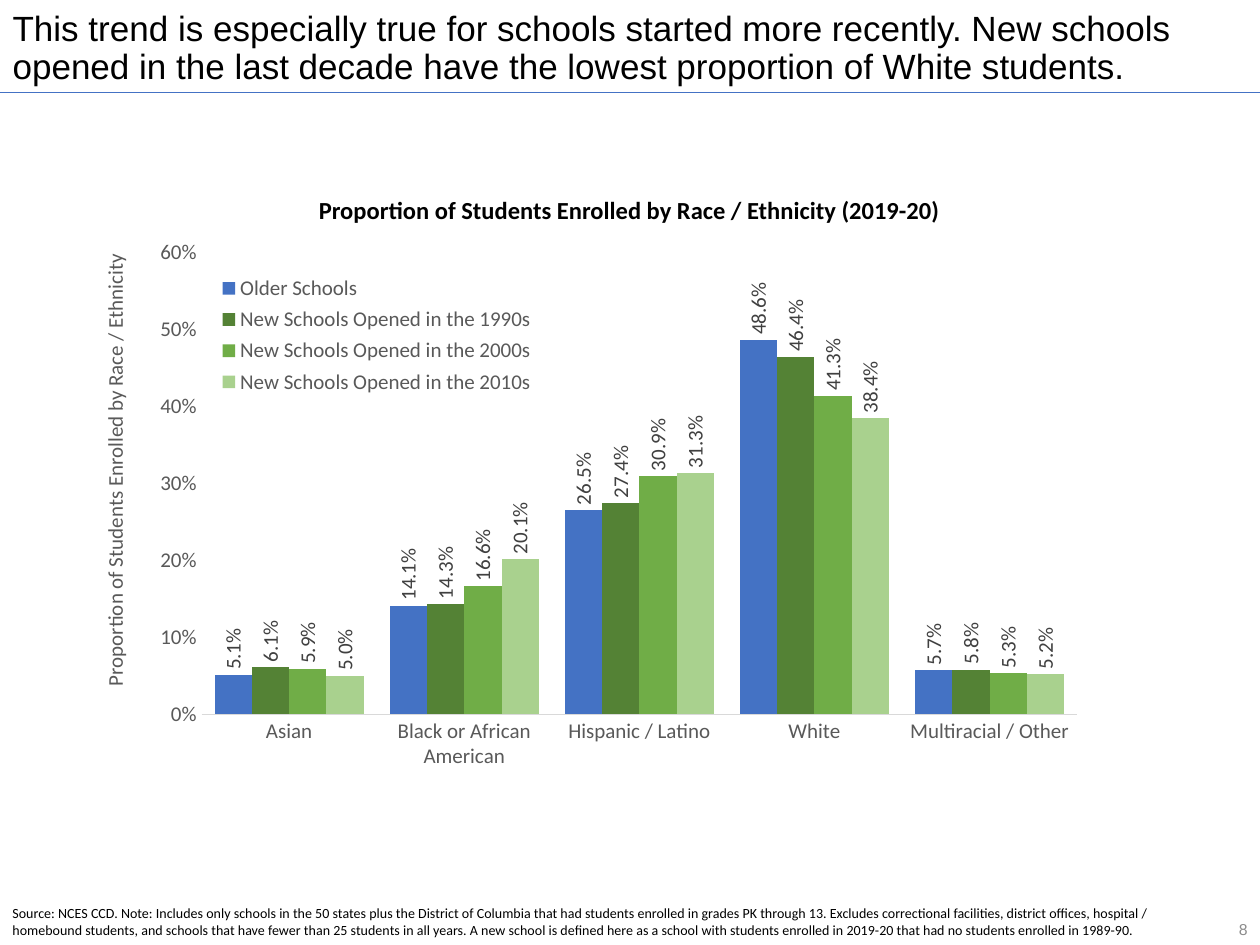
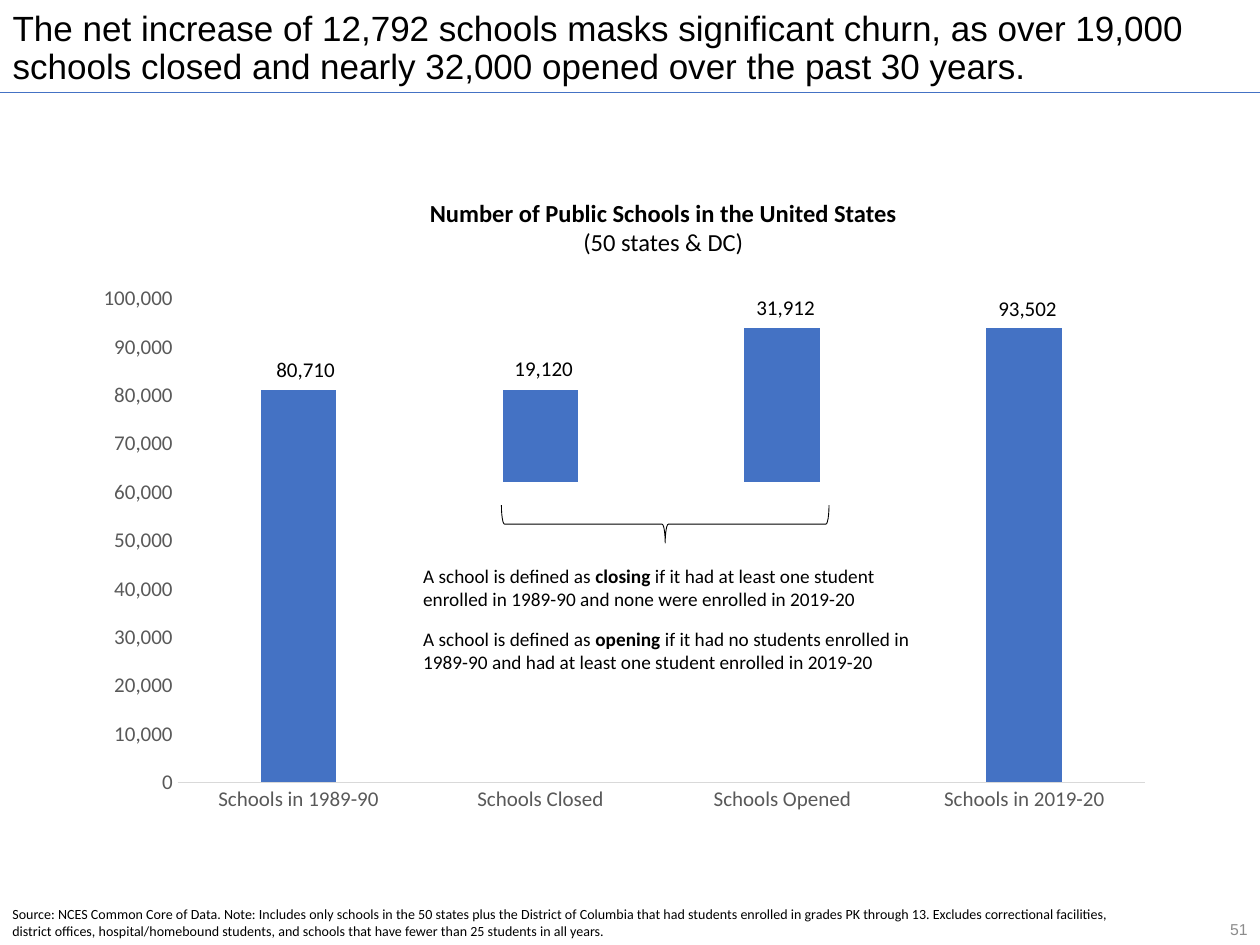
from dataclasses import dataclass

from pptx import Presentation
from pptx.chart.data import CategoryChartData
from pptx.dml.color import RGBColor
from pptx.enum.chart import (XL_CHART_TYPE, XL_LABEL_POSITION,
                             XL_LEGEND_POSITION, XL_TICK_MARK)
from pptx.enum.shapes import MSO_CONNECTOR, MSO_SHAPE
from pptx.enum.text import MSO_ANCHOR, MSO_AUTO_SIZE, PP_ALIGN
from pptx.oxml import parse_xml
from pptx.oxml.ns import nsdecls
from pptx.util import Pt

LEFT, MID, RIGHT = PP_ALIGN.LEFT, PP_ALIGN.CENTER, PP_ALIGN.RIGHT
TOP, BOTTOM = MSO_ANCHOR.TOP, MSO_ANCHOR.BOTTOM
GROUPED, STACKED = XL_CHART_TYPE.COLUMN_CLUSTERED, XL_CHART_TYPE.COLUMN_STACKED
NO_TICK = XL_TICK_MARK.NONE
ABOVE = XL_LABEL_POSITION.OUTSIDE_END
PX = 9144  # one px is a hundredth of an inch


@dataclass(frozen=True)
class Theme:
    head: str = "Arial"
    body: str = "Calibri"
    black: RGBColor = RGBColor(0, 0, 0)
    white: RGBColor = RGBColor(255, 255, 255)
    blue: RGBColor = RGBColor(0x44, 0x72, 0xC4)
    dark: RGBColor = RGBColor(0x54, 0x82, 0x35)
    green: RGBColor = RGBColor(0x70, 0xAD, 0x47)
    pale: RGBColor = RGBColor(0xA9, 0xD1, 0x8E)
    gray: RGBColor = RGBColor(0x59, 0x59, 0x59)
    label: RGBColor = RGBColor(0x40, 0x40, 0x40)
    page: RGBColor = RGBColor(0x8C, 0x8C, 0x8C)
    axis: RGBColor = RGBColor(0xD9, 0xD9, 0xD9)
    title: int = 20
    chart: int = 14
    value: int = 12
    note: int = 11
    number: int = 9
    source: int = 8


T = Theme()


def write(slide, box, paras, size, color=T.black, face=T.body, align=LEFT,
          anchor=TOP, wrap=True):
    """Add a text box; each paragraph is a list of (text, bold) runs."""
    shape = slide.shapes.add_textbox(*(n * PX for n in box))
    frame = shape.text_frame
    frame.word_wrap = wrap
    frame.auto_size = MSO_AUTO_SIZE.NONE
    frame.vertical_anchor = anchor
    for i, runs in enumerate(paras):
        para = frame.add_paragraph() if i else frame.paragraphs[0]
        para.alignment = align
        para.font.size, para.font.name = Pt(size), face
        para.font.color.rgb = color
        for words, bold in runs:
            run = para.add_run()
            run.text = words
            if bold:
                run.font.bold = True
    return shape


def place(part, index, box, area, inner=False):
    """Fix a chart part at a px box inside the chart's px area."""
    for old in part.xpath("c:layout"):
        part.remove(old)
    wide, high = area[2:]
    rows = [("layoutTarget", "inner")] if inner else []
    rows += [("xMode", "edge"), ("yMode", "edge")]
    rows += [(tag, n / whole)
             for tag, n, whole in zip("xywh", box, (wide, high, wide, high))]
    marks = "".join(f'<c:{tag} val="{val}"/>' for tag, val in rows)
    part.insert(index, parse_xml(
        f'<c:layout {nsdecls("c")}><c:manualLayout>{marks}'
        '</c:manualLayout></c:layout>'))


# Content of each slide
DECK = [
    dict(
        title="This trend is especially true for schools started more recently. "
              "New schools opened in the last decade have the lowest proportion "
              "of White students.",
        page="8",
        source="Source: NCES CCD. Note: Includes only schools in the 50 states "
               "plus the District of Columbia that had students enrolled in "
               "grades PK through 13. Excludes correctional facilities, district "
               "offices, hospital / homebound students, and schools that have "
               "fewer than 25 students in all years. A new school is defined "
               "here as a school with students enrolled in 2019-20 that had no "
               "students enrolled in 1989-90.",
        foot=(0, 713, 931, 37),
        head=[[("Proportion of Students Enrolled by Race / Ethnicity (2019-20)",
                True)]],
        spot=(241, 150, 517, 34),
        kind=GROUPED, box=(107, 183, 764, 478), plot=(53, 17, 695, 367),
        gap=70, lap=0, top=0.6, step=0.1, form="0%",
        cats=["Asian", "Black or African American", "Hispanic / Latino",
              "White", "Multiracial / Other"],
        rows=[
            ("Older Schools", T.blue, (0.051, 0.141, 0.265, 0.486, 0.057)),
            ("New Schools Opened in the 1990s", T.dark,
             (0.061, 0.143, 0.274, 0.464, 0.058)),
            ("New Schools Opened in the 2000s", T.green,
             (0.059, 0.166, 0.309, 0.413, 0.053)),
            ("New Schools Opened in the 2010s", T.pale,
             (0.05, 0.201, 0.313, 0.384, 0.052)),
        ]),
    dict(
        title="The net increase of 12,792 schools masks significant churn, as "
              "over 19,000 schools closed and nearly 32,000 opened over the past "
              "30 years.",
        page="51",
        source="Source: NCES Common Core of Data. Note: Includes only schools in "
               "the 50 states plus the District of Columbia that had students "
               "enrolled in grades PK through 13. Excludes correctional "
               "facilities, district offices, hospital/homebound students, and "
               "schools that have fewer than 25 students in all years.",
        foot=(0, 714, 906, 37),
        head=[[("Number of Public Schools in the United States", True)],
              [("(50 states & DC)", False)]],
        spot=(330, 152, 393, 57),
        kind=STACKED, box=(65, 219, 862, 436), plot=(76, 18, 768, 384),
        gap=219, lap=100, top=100000, step=10000, form="#,##0",
        cats=["Schools in 1989-90", "Schools Closed", "Schools Opened",
              "Schools in 2019-20"],
        rows=[("Series 1", None, (0, 62000, 62000, 0)),
              ("Series 2", T.blue, (81000, 19000, 32000, 94000))]),
]

prs = Presentation()
prs.slide_width, prs.slide_height = 1000 * PX, 750 * PX
slides, charts = [], []

for data in DECK:
    slide = prs.slides.add_slide(prs.slide_layouts[5])
    slides.append(slide)

    # Title and the rule below it
    title = slide.shapes.title
    title.left, title.top, title.width, title.height = 0, 0, 1000 * PX, 74 * PX
    frame = title.text_frame
    frame.text = data["title"]
    frame.auto_size = MSO_AUTO_SIZE.NONE
    frame.vertical_anchor = BOTTOM
    para = frame.paragraphs[0]
    para.alignment, para.line_spacing = LEFT, 0.9
    para.font.size, para.font.name = Pt(T.title), T.head
    para.font.color.rgb = T.black
    rule = slide.shapes.add_connector(
        MSO_CONNECTOR.STRAIGHT, 0, 73 * PX, 1000 * PX, 73 * PX)
    rule.line.color.rgb, rule.line.width = T.blue, Pt(0.5)
    rule.element.spPr.append(parse_xml(f'<a:effectLst {nsdecls("a")}/>'))

    # Page number, source and chart heading
    write(slide, (942, 710, 58, 40), [[(data["page"], False)]], T.number,
          T.page, T.head, RIGHT, BOTTOM)
    write(slide, data["foot"], [[(data["source"], False)]], T.source)
    head = write(slide, data["spot"], data["head"], T.chart, align=MID,
                 wrap=False)
    head.fill.solid()
    head.fill.fore_color.rgb = T.white

    # Chart
    table = CategoryChartData(number_format=data["form"])
    table.categories = data["cats"]
    for name, color, vals in data["rows"]:
        table.add_series(name, vals)
    chart = slide.shapes.add_chart(
        data["kind"], *(n * PX for n in data["box"]), table).chart
    charts.append(chart)
    chart.has_title = chart.has_legend = False
    chart.font.size, chart.font.name = Pt(T.value), T.body
    chart.font.color.rgb = T.gray
    plot = chart.plots[0]
    plot.gap_width, plot.overlap = data["gap"], data["lap"]
    plot.vary_by_categories = False
    for series, (name, color, vals) in zip(plot.series, data["rows"]):
        fill = series.format.fill
        if color is None:  # unseen base that lifts the floating bars
            fill.background()
        else:
            fill.solid()
            fill.fore_color.rgb = color
    cat, val = chart.category_axis, chart.value_axis
    for axis in (cat, val):
        axis.major_tick_mark = axis.minor_tick_mark = NO_TICK
        axis.has_major_gridlines = False
    cat.format.line.color.rgb, cat.format.line.width = T.axis, Pt(0.75)
    val.format.line.fill.background()
    val.minimum_scale, val.maximum_scale = 0, data["top"]
    val.major_unit = data["step"]
    val.tick_labels.number_format = data["form"]
    val.tick_labels.number_format_is_linked = False
    place(chart.element.xpath("c:chart/c:plotArea")[0], 0, data["plot"],
          data["box"], True)

# Enrollment slide: upright labels, legend, axis title
slide, chart = slides[0], charts[0]
for series in chart.plots[0].series:
    tags = series.data_labels
    tags.show_value, tags.position = True, ABOVE
    tags.number_format, tags.number_format_is_linked = "0.0%", False
    tags.font.size, tags.font.name = Pt(T.value), T.body
    tags.font.color.rgb = T.label
for body in chart.element.xpath(".//c:dLbls/c:txPr/a:bodyPr"):
    body.set("rot", "-5400000")
    body.set("vert", "horz")
chart.has_legend = True
chart.legend.position = XL_LEGEND_POSITION.BOTTOM
chart.legend.include_in_layout = False
chart.legend.font.size, chart.legend.font.name = Pt(T.value), T.body
chart.legend.font.color.rgb = T.gray
place(chart.element.xpath("c:chart/c:legend")[0], 1, (62, 31, 260, 104),
      DECK[0]["box"])
side = write(slide, (-92, 358, 366, 30),
             [[("Proportion of Students Enrolled by Race / Ethnicity", False)]],
             T.value, T.gray, align=MID, wrap=False)
side.rotation = 270

# Churn slide: totals above the bars
slide = slides[1]
for x, y, total in ((209, 278, "80,710"), (398, 277, "19,120"),
                    (590, 229, "31,912"), (782, 230, "93,502")):
    write(slide, (x, y, 67, 30), [[(total, False)]], T.value, align=MID,
          wrap=False)

# Brace with the two definitions
brace = slide.shapes.add_shape(
    MSO_SHAPE.LEFT_BRACE, 513 * PX, 286 * PX, 30 * PX, 260 * PX)
brace.rotation = 270
brace.shadow.inherit = False
brace.fill.background()
brace.line.color.rgb, brace.line.width = T.black, Pt(0.5)
for y, wide, word, rest in (
        (443, 401, "closing", " if it had at least one student enrolled in "
                              "1989-90 and none were enrolled in 2019-20"),
        (493, 412, "opening", " if it had no students enrolled in 1989-90 and "
                              "had at least one student enrolled in 2019-20")):
    write(slide, (326, y, wide, 47),
          [[("A school is defined as ", False), (word, True), (rest, False)]],
          T.note)

prs.save("out.pptx")
